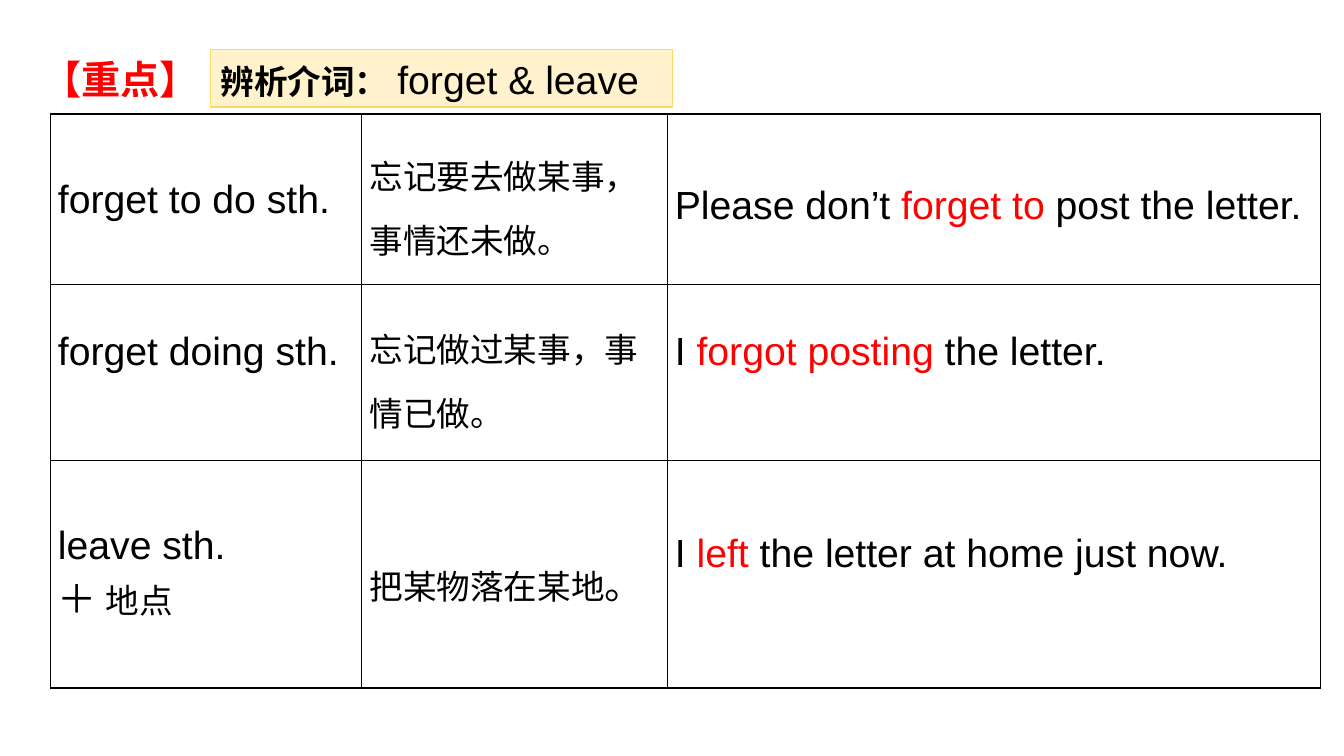
from dataclasses import dataclass

from lxml import etree
from pptx import Presentation
from pptx.dml.color import RGBColor
from pptx.enum import shapes, text
from pptx.oxml import ns
from pptx.util import Pt

LATIN, CJK = "Arial", "Noto Sans CJK SC"
BLACK, RED = "000000", "FF0000"
LARGE, SMALL = 28, 24


@dataclass
class Run:
    text: str
    size: int = LARGE
    color: str = BLACK
    font: str = LATIN
    bold: bool = False


@dataclass
class Entry:
    paragraphs: list[list[Run]]
    spacing: float = 1.0
    bottom: float = 0


def rgb(value: str) -> RGBColor:
    return RGBColor.from_string(value)


def write(tf, paragraphs: list[list[Run]], spacing: float = 1.0) -> None:
    for i, runs in enumerate(paragraphs):
        p = tf.paragraphs[0] if i == 0 else tf.add_paragraph()
        p.alignment = text.PP_ALIGN.LEFT
        p.line_spacing = spacing
        for run in runs:
            r = p.add_run()
            r.text = run.text
            r.font.size = Pt(run.size)
            r.font.bold = run.bold
            r.font.color.rgb = rgb(run.color)
            r.font.name = run.font
            ea = etree.SubElement(r.font._element, ns.qn("a:ea"))
            ea.set("typeface", CJK)


def set_insets(box, x: float, y: float, bottom: float) -> None:
    box.margin_left = box.margin_right = Pt(x)
    box.margin_top, box.margin_bottom = Pt(y), Pt(bottom)


def set_borders(cell, color: str, width: float) -> None:
    tcPr = cell._tc.get_or_add_tcPr()
    for side in ("lnL", "lnR", "lnT", "lnB"):
        ln = etree.SubElement(tcPr, ns.qn(f"a:{side}"), w=str(Pt(width)))
        fill = etree.SubElement(ln, ns.qn("a:solidFill"))
        etree.SubElement(fill, ns.qn("a:srgbClr"), val=color)


def fill_cell(cell, entry: Entry) -> None:
    set_borders(cell, BLACK, 1)
    cell.fill.background()
    cell.vertical_anchor = text.MSO_ANCHOR.MIDDLE
    set_insets(cell, 5.4, 0, entry.bottom)
    write(cell.text_frame, entry.paragraphs, entry.spacing)


def meaning(words: str) -> Entry:
    return Entry([[Run(words, SMALL)]], 1.3)


def example(before: str, key: str, after: str, bottom: float = 0) -> Entry:
    return Entry([[Run(before), Run(key, color=RED), Run(after)]], 1.3, bottom)


COLUMNS = [222.5, 218.2, 466.5]
ROWS = [122, 125.5, 162.5]
ENTRIES = [
    [
        Entry([[Run("forget to do sth.")]]),
        meaning("忘记要去做某事，事情还未做。"),
        example("Please don’t ", "forget to ", "post the letter."),
    ],
    [
        Entry([[Run("forget doing sth.")]], bottom=30),
        meaning("忘记做过某事，事情已做。"),
        example("I ", "forgot posting", " the letter.", bottom=39),
    ],
    [
        Entry([[Run("leave sth.")], [Run("＋ "), Run("地点", SMALL)]]),
        Entry([[Run("把某物落在某地", SMALL), Run("。")]], 1.3),
        example("I ", "left ", "the letter at home just now.", bottom=39),
    ],
]


def main() -> None:
    prs = Presentation()
    prs.slide_width, prs.slide_height = Pt(960), Pt(540)
    s = prs.slides.add_slide(prs.slide_layouts[5])

    # Title
    title = s.shapes.title
    title.left, title.top, title.width, title.height = Pt(23), Pt(35.5), Pt(127), Pt(41)
    tf = title.text_frame
    tf.word_wrap = False
    tf.auto_size = text.MSO_AUTO_SIZE.NONE
    tf.vertical_anchor = text.MSO_ANCHOR.MIDDLE
    set_insets(tf, 7.2, 3.6, 3.6)
    write(tf, [[Run("【重点】", color=RED, font=CJK, bold=True)]])

    # Topic banner
    sp = s.shapes.add_shape(
        shapes.MSO_SHAPE.RECTANGLE, Pt(150.5), Pt(35.5), Pt(330), Pt(41)
    )
    sp.shadow.inherit = False
    sp.fill.solid()
    sp.fill.fore_color.rgb = rgb("FFF2CC")
    sp.line.color.rgb = rgb("FFD966")
    sp.line.width = Pt(0.75)
    tf = sp.text_frame
    tf.word_wrap = True
    tf.vertical_anchor = text.MSO_ANCHOR.MIDDLE
    set_insets(tf, 7.2, 3.6, 3.6)
    write(tf, [[Run("辨析介词：", SMALL, font=CJK, bold=True), Run(" forget & leave")]])

    # Comparison table
    table = s.shapes.add_table(
        len(ROWS), len(COLUMNS), Pt(36), Pt(81.5), Pt(sum(COLUMNS)), Pt(sum(ROWS))
    ).table
    table.first_row = table.horz_banding = False
    for column, width in zip(table.columns, COLUMNS):
        column.width = Pt(width)
    for row, height, entries in zip(table.rows, ROWS, ENTRIES):
        row.height = Pt(height)
        for cell, entry in zip(row.cells, entries):
            fill_cell(cell, entry)

    prs.save("out.pptx")


if __name__ == "__main__":
    main()
